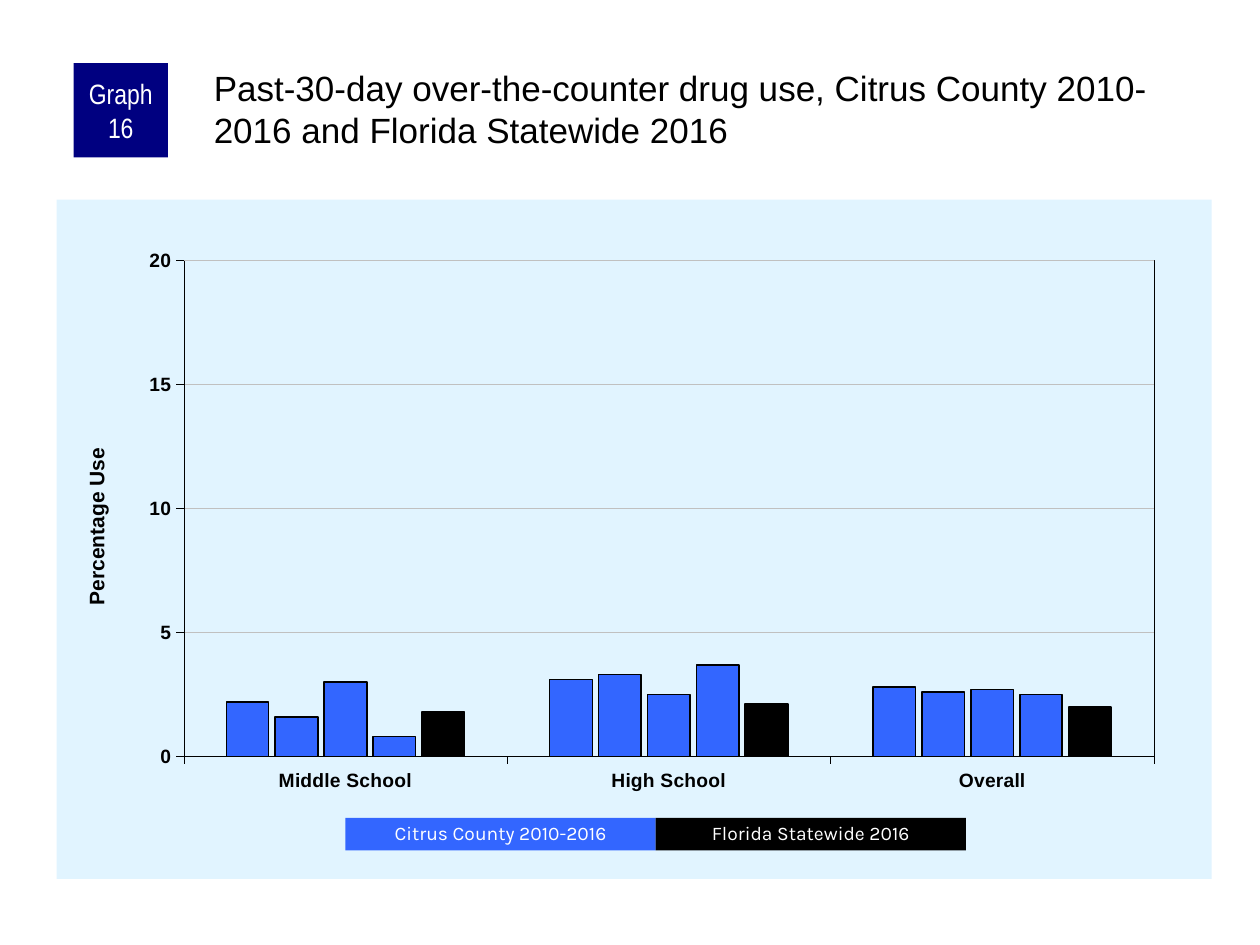
from lxml import etree
from pptx import Presentation
from pptx.chart.data import CategoryChartData
from pptx.dml.color import RGBColor
from pptx.enum.chart import XL_CHART_TYPE, XL_TICK_MARK
from pptx.enum.shapes import MSO_SHAPE
from pptx.enum.text import MSO_ANCHOR, MSO_AUTO_SIZE, PP_ALIGN
from pptx.oxml import parse_xml
from pptx.util import Inches, Pt

COLUMN = XL_CHART_TYPE.COLUMN_CLUSTERED
OUT, NONE = XL_TICK_MARK.OUTSIDE, XL_TICK_MARK.NONE
RECT = MSO_SHAPE.RECTANGLE
TOP, MIDDLE = MSO_ANCHOR.TOP, MSO_ANCHOR.MIDDLE
LEFT, CENTER = PP_ALIGN.LEFT, PP_ALIGN.CENTER
FIXED = MSO_AUTO_SIZE.NONE

WIDE, HIGH = Inches(10), Inches(7.5)
COLS, ROWS = 120, 90
BLUE, BLACK, WHITE, NAVY = "3366FF", "000000", "FFFFFF", "000080"
PALE, GRAY = "E1F4FF", "C0C0C0"
SPACE = (
    'xmlns:c="http://schemas.openxmlformats.org/drawingml/2006/chart" '
    'xmlns:a="http://schemas.openxmlformats.org/drawingml/2006/main"'
)

GROUPS = ["Middle School", "High School", "Overall"]
SERIES = [
    ("Series 1", (2.2, 3.1, 2.8), BLUE, 0.75),
    ("Series 2", (1.6, 3.3, 2.6), BLUE, 1),
    ("Series 3", (3, 2.5, 2.7), BLUE, 1),
    ("Series 4", (0.8, 3.7, 2.5), BLUE, 1),
    ("Series 5", (1.8, 2.1, 2), BLACK, 1),
]


def color(code):
    return RGBColor.from_string(code)


def scale(box):
    x, y, w, h = box
    return (
        round(x * WIDE / COLS),
        round(y * HIGH / ROWS),
        round(w * WIDE / COLS),
        round(h * HIGH / ROWS),
    )


def style(font, face, size, code, bold=False):
    font.name, font.size, font.bold = face, Pt(size), bold
    font.color.rgb = color(code)


def stroke(line, code, width):
    line.color.rgb = color(code)
    line.width = Pt(width)


def write(frame, text, face, size, code, align, anchor):
    frame.text = text
    frame.word_wrap = True
    frame.auto_size = FIXED
    frame.vertical_anchor = anchor
    part = frame.paragraphs[0]
    part.alignment = align
    style(part.runs[0].font, face, size, code)
    return part


def inset(frame, left, top, right, bottom):
    frame.margin_left, frame.margin_top = Inches(left), Inches(top)
    frame.margin_right, frame.margin_bottom = Inches(right), Inches(bottom)


def block(slide, box, fill, text, face, size):
    shape = slide.shapes.add_shape(RECT, *scale(box))
    shape.shadow.inherit = False
    shape.fill.solid()
    shape.fill.fore_color.rgb = color(fill)
    shape.line.fill.background()
    part = write(shape.text_frame, text, face, size, WHITE, CENTER, MIDDLE)
    return shape.text_frame, part


def badge(slide, box):
    frame, part = block(slide, box, NAVY, "Graph 16", "Arial Narrow", 16)
    inset(frame, 0.05, 0, 0.05, 0)


def head(slide, box):
    title = slide.shapes.title
    title.left, title.top, title.width, title.height = scale(box)
    text = (
        "Past-30-day over-the-counter drug use, Citrus County 2010-2016 "
        "and Florida Statewide 2016"
    )
    write(title.text_frame, text, "Arial", 20, BLACK, LEFT, TOP)
    inset(title.text_frame, 0.03, 0.03, 0, 0)


def layout(x, y, size=None):
    parts = [("xMode", "edge"), ("yMode", "edge"), ("x", x), ("y", y)]
    if size:
        parts.insert(0, ("layoutTarget", "inner"))
        parts += [("w", size[0]), ("h", size[1])]
    body = "".join(f'<c:{tag} val="{val}"/>' for tag, val in parts)
    return parse_xml(
        f"<c:layout {SPACE}><c:manualLayout>{body}</c:manualLayout></c:layout>"
    )


def paint(fill, line):
    def solid(code):
        return f'<a:solidFill><a:srgbClr val="{code}"/></a:solidFill>'

    back = solid(fill) if fill else "<a:noFill/>"
    edge = solid(line) if line else "<a:noFill/>"
    return parse_xml(
        f'<c:spPr {SPACE}>{back}<a:ln w="3175">{edge}</a:ln></c:spPr>'
    )


def dress(chart):
    root = chart.element.find("{*}chart")
    root.addnext(paint(PALE, None))
    area = root.find("{*}plotArea")
    for old in area.findall("{*}layout"):
        area.remove(old)
    area.insert(0, layout(0.11, 0.09, (0.84, 0.73)))
    area.append(paint(None, BLACK))


def label(axis):
    frame = axis.axis_title.text_frame
    frame.text = "Percentage Use"
    style(frame.paragraphs[0].runs[0].font, "Arial", 12, BLACK, True)
    node = axis.axis_title._element
    for old in node.findall("{*}layout"):
        node.remove(old)
    node.find("{*}tx").addnext(layout(0.02, 0.36))


def graph(slide, box):
    data = CategoryChartData()
    data.categories = GROUPS
    for name, vals, fill, width in SERIES:
        data.add_series(name, vals)
    chart = slide.shapes.add_chart(COLUMN, *scale(box), data).chart
    chart.has_title = chart.has_legend = False
    style(chart.font, "Arial", 8, BLACK)
    plot = chart.plots[0]
    plot.gap_width, plot.overlap = 200, -15
    plot.vary_by_categories = False
    for item, (name, vals, fill, width) in zip(plot.series, SERIES):
        item.format.fill.solid()
        item.format.fill.fore_color.rgb = color(fill)
        stroke(item.format.line, BLACK, width)
    for axis in (chart.category_axis, chart.value_axis):
        axis.major_tick_mark, axis.minor_tick_mark = OUT, NONE
        style(axis.tick_labels.font, "Arial", 11, BLACK, True)
        stroke(axis.format.line, BLACK, 0.25)
    axis = chart.value_axis
    axis.minimum_scale, axis.maximum_scale, axis.major_unit = 0, 20, 5
    axis.tick_labels.number_format = "0"
    axis.tick_labels.number_format_is_linked = False
    stroke(axis.major_gridlines.format.line, GRAY, 0.25)
    label(axis)
    dress(chart)


def key(slide, box):
    x, y, w, h = box
    names = [("Citrus County 2010-2016", BLUE), ("Florida Statewide 2016", BLACK)]
    step = w / len(names)
    for spot, (name, fill) in enumerate(names):
        cell = (x + spot * step, y, step, h)
        frame, part = block(slide, cell, fill, name, "Karla", 11)
        part.line_spacing = 0.9


def main():
    deck = Presentation()
    deck.slide_width, deck.slide_height = WIDE, HIGH
    slide = deck.slides.add_slide(deck.slide_layouts[5])
    graph(slide, (5.4, 19, 110, 64.7))
    badge(slide, (7, 6, 9, 9))
    head(slide, (20, 6, 95, 10))
    key(slide, (32.9, 77.9, 59.1, 3.1))
    deck.save("out.pptx")


if __name__ == "__main__":
    main()
